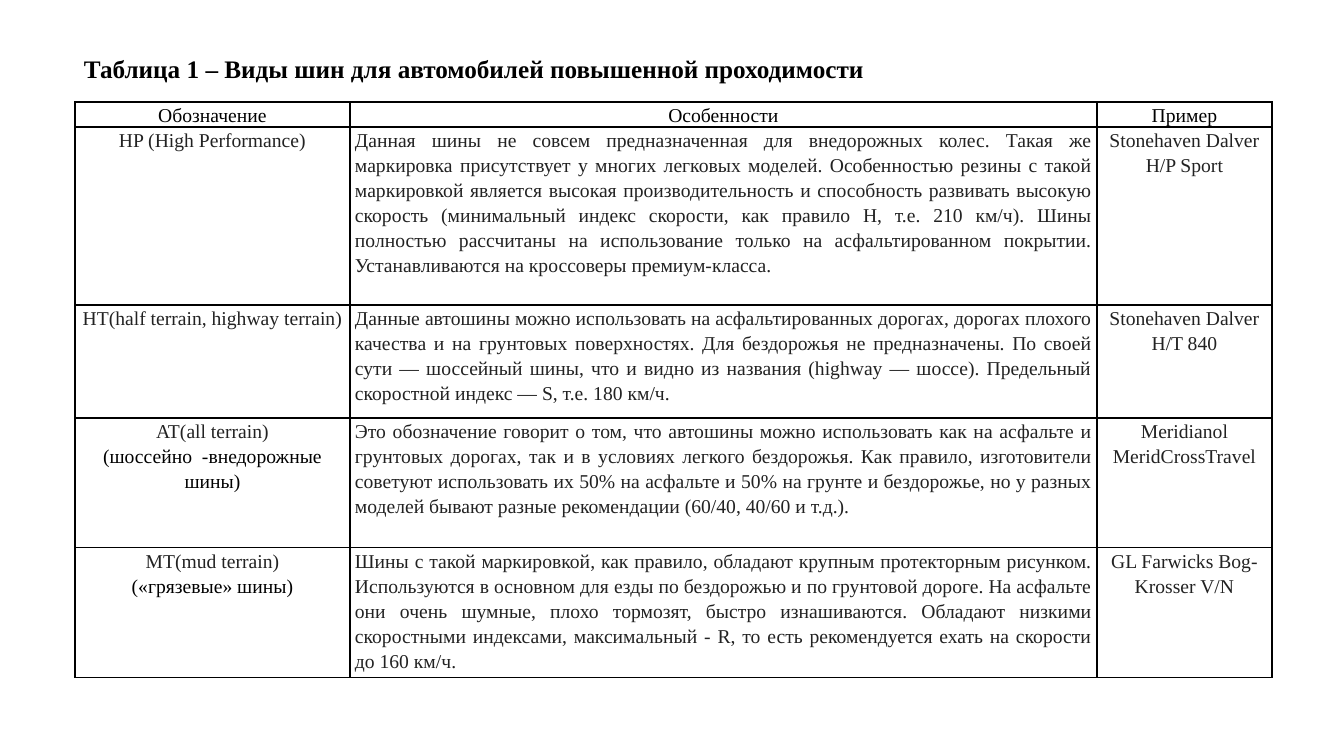
from dataclasses import dataclass

from lxml.etree import SubElement
from pptx import Presentation
from pptx.dml.color import RGBColor
from pptx.enum.text import MSO_ANCHOR, MSO_AUTO_SIZE, PP_ALIGN
from pptx.oxml.ns import qn
from pptx.slide import Slide
from pptx.table import Table, _Cell
from pptx.text.text import _Paragraph
from pptx.util import Emu, Pt

EMU_PER_PX = 12192000 / 1344
FONT = "Times New Roman"
BLACK = "000000"
GREY = "222222"
HEADINGS = ("Обозначение", "Особенности", "Пример")
COLUMN_WIDTHS = (275, 747, 175)
HEADER_HEIGHT = 25
CELL_INSET = 5


@dataclass(frozen=True)
class TyreType:
    """One body row of the table."""

    height: int
    marking: str
    features: str
    example: str
    nickname: str = ""


TYRE_TYPES = (
    TyreType(
        178,
        "HP (High Performance)",
        "Данная шины не совсем предназначенная для внедорожных колес. Такая же маркировка "
        "присутствует у многих легковых моделей. Особенностью резины с такой маркировкой является "
        "высокая производительность и способность развивать высокую скорость (минимальный индекс "
        "скорости, как правило H, т.е. 210 км/ч). Шины полностью рассчитаны на использование только "
        "на асфальтированном покрытии. Устанавливаются на кроссоверы премиум-класса.",
        "Stonehaven Dalver H/P Sport",
    ),
    TyreType(
        113,
        "HT(half terrain, highway terrain)",
        "Данные автошины можно использовать на асфальтированных дорогах, дорогах плохого качества и "
        "на грунтовых поверхностях. Для бездорожья не предназначены. По своей сути — шоссейный шины, "
        "что и видно из названия (highway — шоссе). Предельный скоростной индекс — S, т.е. 180 км/ч.",
        "Stonehaven Dalver H/T 840",
    ),
    TyreType(
        130,
        "AT(all terrain)",
        "Это обозначение говорит о том, что автошины можно использовать как на асфальте и грунтовых "
        "дорогах, так и в условиях легкого бездорожья. Как правило, изготовители советуют "
        "использовать их 50% на асфальте и 50% на грунте и бездорожье, но у разных моделей бывают "
        "разные рекомендации (60/40, 40/60 и т.д.).",
        "Meridianol MeridCrossTravel",
        "(шоссейно  -внедорожные шины)",
    ),
    TyreType(
        130,
        "MT(mud terrain)",
        "Шины с такой маркировкой, как правило, обладают крупным протекторным рисунком. Используются "
        "в основном для езды по бездорожью и по грунтовой дороге. На асфальте они очень шумные, плохо "
        "тормозят, быстро изнашиваются. Обладают низкими скоростными индексами, максимальный - R, то "
        "есть рекомендуется ехать на скорости до 160 км/ч.",
        "GL Farwicks Bog-Krosser V/N",
        "(«грязевые» шины)",
    ),
)


def px(length: int) -> Emu:
    """Turn pixels into EMU."""
    return Emu(round(length * EMU_PER_PX))


def colour(value: str) -> RGBColor:
    """Turn a hex string into a colour."""
    return RGBColor.from_string(value)


def add_text(paragraph: _Paragraph, text: str, size: int, shade: str, bold: bool = False) -> None:
    """Add one formatted run to a paragraph."""
    run = paragraph.add_run()
    run.text = text
    run.font.name = FONT
    run.font.size = Pt(size)
    run.font.bold = bold
    run.font.color.rgb = colour(shade)


def draw_borders(cell: _Cell) -> None:
    """Give a cell a thin black line on all four sides."""
    properties = cell._tc.get_or_add_tcPr()
    for side in ("a:lnL", "a:lnR", "a:lnT", "a:lnB"):
        line = SubElement(properties, qn(side), w=str(Pt(1)))
        fill = SubElement(line, qn("a:solidFill"))
        SubElement(fill, qn("a:srgbClr"), val=BLACK)


def fill_cell(cell: _Cell, lines: list[tuple[str, str]], alignment: PP_ALIGN) -> None:
    """Write lines of text and colour into a bordered cell."""
    cell.margin_left = cell.margin_right = px(CELL_INSET)
    cell.margin_top = cell.margin_bottom = 0
    cell.vertical_anchor = MSO_ANCHOR.TOP
    draw_borders(cell)
    cell.fill.background()
    frame = cell.text_frame
    for index, (text, shade) in enumerate(lines):
        paragraph = frame.add_paragraph() if index else frame.paragraphs[0]
        paragraph.alignment = alignment
        paragraph.line_spacing = 1.15
        add_text(paragraph, text, 14, shade)


def fill_row(table: Table, row: int, tyre: TyreType) -> None:
    """Write one tyre type into a table row."""
    marking = [(tyre.marking, GREY)]
    if tyre.nickname:
        marking.append((tyre.nickname, BLACK))
    fill_cell(table.cell(row, 0), marking, PP_ALIGN.CENTER)
    fill_cell(table.cell(row, 1), [(tyre.features, GREY)], PP_ALIGN.JUSTIFY)
    fill_cell(table.cell(row, 2), [(tyre.example, GREY)], PP_ALIGN.CENTER)


def add_tyre_table(slide: Slide) -> None:
    """Add the table of tyre types."""
    heights = [HEADER_HEIGHT] + [tyre.height for tyre in TYRE_TYPES]
    table = slide.shapes.add_table(
        len(heights), len(COLUMN_WIDTHS), px(75), px(102), px(sum(COLUMN_WIDTHS)), px(sum(heights))
    ).table
    table.first_row = table.horz_banding = False
    for column, width in zip(table.columns, COLUMN_WIDTHS):
        column.width = px(width)
    for row, height in zip(table.rows, heights):
        row.height = px(height)
    for index, heading in enumerate(HEADINGS):
        fill_cell(table.cell(0, index), [(heading, BLACK)], PP_ALIGN.CENTER)
    for index, tyre in enumerate(TYRE_TYPES, start=1):
        fill_row(table, index, tyre)


def add_title(slide: Slide) -> None:
    """Add the table caption above the table."""
    frame = slide.shapes.add_textbox(px(74), px(48), px(808), px(40)).text_frame
    frame.word_wrap = False
    frame.auto_size = MSO_AUTO_SIZE.SHAPE_TO_FIT_TEXT
    caption = "Таблица 1 – Виды шин для автомобилей повышенной проходимости"
    add_text(frame.paragraphs[0], caption, 18, BLACK, bold=True)


def main() -> None:
    """Build and save the slide."""
    presentation = Presentation()
    presentation.slide_width = px(1344)
    presentation.slide_height = px(756)
    slide = presentation.slides.add_slide(presentation.slide_layouts[6])
    add_tyre_table(slide)
    add_title(slide)
    presentation.save("out.pptx")


if __name__ == "__main__":
    main()
